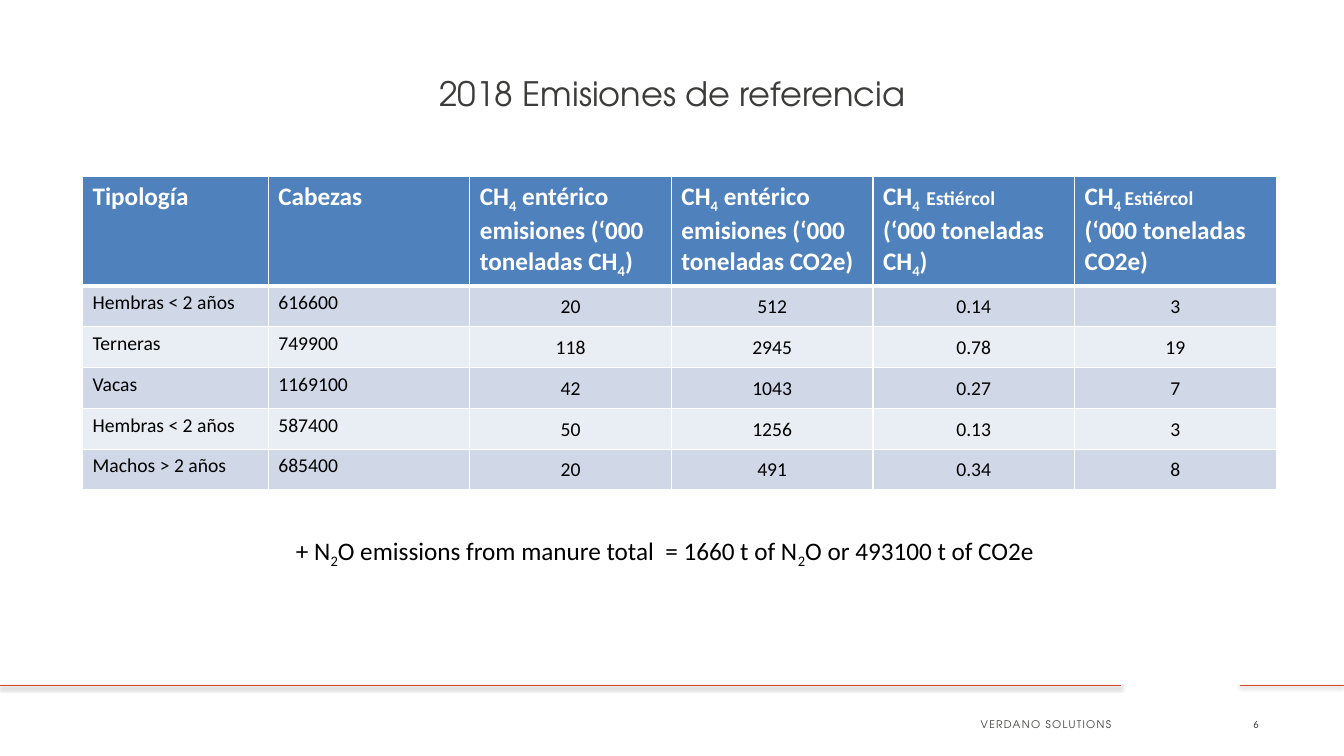
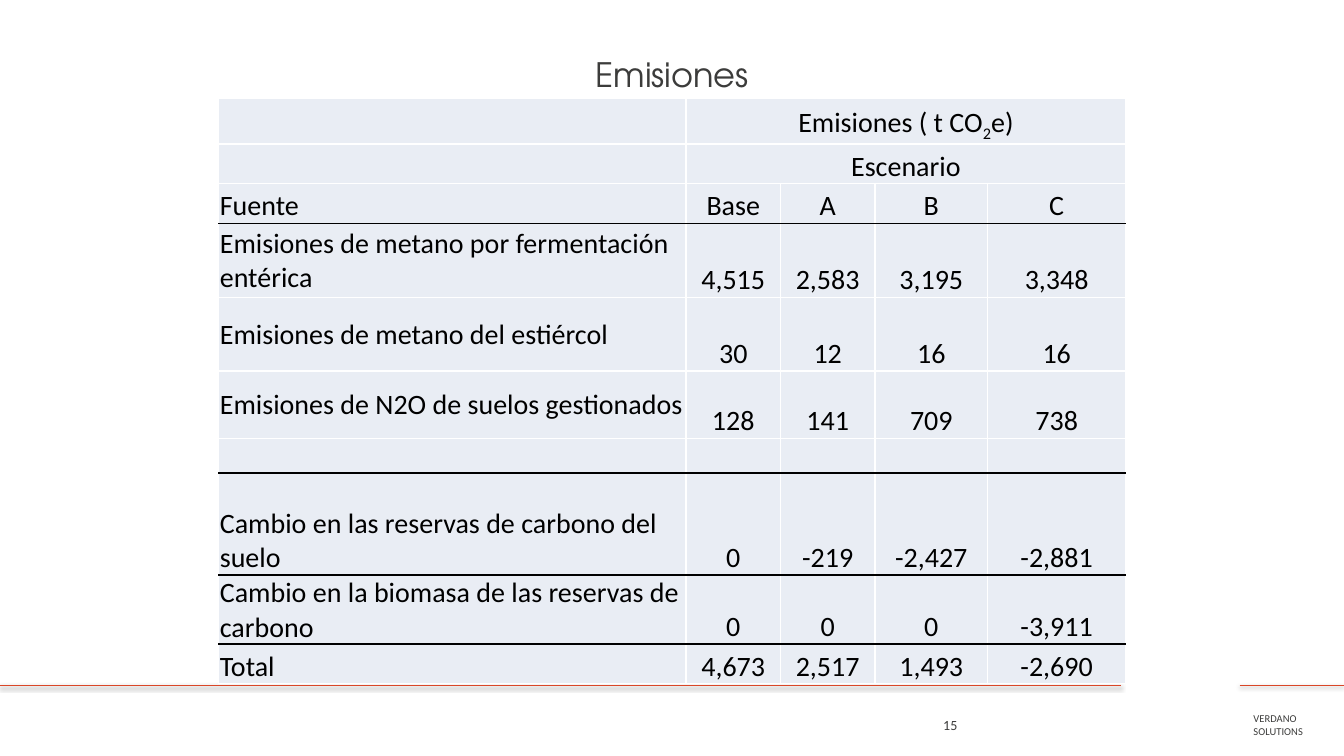
from lxml.etree import SubElement
from pptx import Presentation
from pptx.dml.color import RGBColor
from pptx.enum.shapes import MSO_CONNECTOR
from pptx.enum.text import MSO_ANCHOR, PP_ALIGN
from pptx.oxml import parse_xml
from pptx.oxml.ns import qn
from pptx.util import Cm, Pt

INK = {"red": "DA4627", "gray": "3C3C3B", "black": "000000", "white": "FFFFFF",
       "blue": "4F81BD", "mid": "D0D8E8", "pale": "E9EDF4"}
SANS, BODY = "TeX Gyre Adventor", "Calibri"
LEFT, RIGHT, CENTER = PP_ALIGN.LEFT, PP_ALIGN.RIGHT, PP_ALIGN.CENTER
TOP, MIDDLE, BOTTOM = MSO_ANCHOR.TOP, MSO_ANCHOR.MIDDLE, MSO_ANCHOR.BOTTOM
SMALL = 14
FIRM = "VERDANO SOLUTIONS"
CORNER = (31.34, 17.75, 2.08, 1.02)
SHADOW = ('<a:effectLst xmlns:a="http://schemas.openxmlformats.org/drawingml/2006/main">'
          '<a:outerShdw blurRad="39400" dist="20300" dir="5400000" rotWithShape="0">'
          '<a:srgbClr val="000000"><a:alpha val="38000"/></a:srgbClr>'
          '</a:outerShdw></a:effectLst>')


def write(para, text, size, color, font=BODY, bold=False, gap=0):
    """Add runs: |x| is a subscript, text after ~ is small."""
    large, _, small = text.partition("~")
    for part, points in ((large, size), (small, SMALL)):
        for i, piece in enumerate(part.split("|")):
            if not piece:
                continue
            run = para.add_run()
            run.text = piece
            run.font.name = font
            run.font.size = Pt(points)
            run.font.bold = bold
            run.font.color.rgb = RGBColor.from_string(INK[color])
            props = run._r.get_or_add_rPr()
            if i % 2:
                props.set("baseline", "-25000")
            if gap:
                props.set("spc", str(gap))


def border(cell, side, color, width):
    """Draw one side (L, R, T or B) of a cell."""
    line = SubElement(cell._tc.get_or_add_tcPr(), qn("a:ln" + side),
                      w=str(Pt(width)))
    fill = SubElement(line, qn("a:solidFill"))
    SubElement(fill, qn("a:srgbClr"), val=INK[color])


# Content: each text is (words, box, size, font, colour, align, gap, wrap);
# cells from column "tight" have thin margins, from column "mid" are centred
DECK = [
    {
        "texts": [
            ("2018 Emisiones de referencia", (1.7, 0.76, 30.48, 3.18),
             24, SANS, "gray", CENTER, 0, True),
            (FIRM, (17.53, 17.75, 10.72, 1.02), 7.5, SANS, "gray", RIGHT, 90, True),
            ("6", CORNER, 7.5, BODY, "gray", LEFT, 0, True),
            ("+ N|2|O emissions from manure total  = 1660 t of N|2|O or 493100 t of CO2e",
             (7.21, 13.36, 19.38, 1.02), 18, BODY, "black", LEFT, 0, False),
        ],
        "at": (2.08, 4.45),
        "cols": [4.68] + [5.08] * 5,
        "tall": [2.72] + [1.03] * 5,
        "size": 14, "head": 1, "fills": ["mid", "pale"],
        "tight": 2, "mid": 2, "anchor": MIDDLE, "raised": [],
        "rules": {0: ("white", 3)}, "spans": [],
        "rows": [
            ["Tipología", "Cabezas",
             "CH|4| entérico emisiones (‘000 toneladas CH|4|)",
             "CH|4| entérico emisiones (‘000 toneladas CO2e)",
             "CH|4  |~Estiércol\n(‘000 toneladas CH|4|)",
             "CH|4 |~Estiércol\n(‘000 toneladas CO2e)"],
            ["Hembras < 2 años", "616600", "20", "512", "0.14", "3"],
            ["Terneras", "749900", "118", "2945", "0.78", "19"],
            ["Vacas", "1169100", "42", "1043", "0.27", "7"],
            ["Hembras < 2 años", "587400", "50", "1256", "0.13", "3"],
            ["Machos > 2 años", "685400", "20", "491", "0.34", "8"],
        ],
    },
    {
        "texts": [
            ("Emisiones", (5.51, 0.28, 22.86, 3.18), 24, SANS, "gray", CENTER, 0, True),
            (FIRM, CORNER, 7.5, BODY, "gray", LEFT, 0, True),
            ("15", (23.52, 17.75, 1.55, 1.02), 10, BODY, "gray", LEFT, 0, True),
        ],
        "at": (5.51, 2.49),
        "cols": [11.78, 2.38, 2.38, 2.84, 3.48],
        "tall": [1.14, 1, 1, 1.86, 1.86, 1.7, 0.87, 2.57, 1.74, 1],
        "size": 20, "head": 0, "fills": ["pale"],
        "tight": 0, "mid": 1, "anchor": BOTTOM, "raised": [3, 4, 5],
        "rules": {r: ("black", 1) for r in (2, 6, 7, 8)}, "spans": [0, 1],
        "rows": [
            ["", "Emisiones ( t CO|2|e)", "", "", ""],
            ["", "Escenario", "", "", ""],
            ["Fuente", "Base", "A", "B", "C"],
            ["Emisiones de metano por fermentación entérica",
             "4,515", "2,583", "3,195", "3,348"],
            ["Emisiones de metano del estiércol", "30", "12", "16", "16"],
            ["Emisiones de N2O de suelos gestionados", "128", "141", "709", "738"],
            [""] * 5,
            ["Cambio en las reservas de carbono del suelo",
             "0", "-219", "-2,427", "-2,881"],
            ["Cambio en la biomasa de las reservas de carbono",
             "0", "0", "0", "-3,911"],
            ["Total", "4,673", "2,517", "1,493", "-2,690"],
        ],
    },
]

prs = Presentation()
prs.slide_width, prs.slide_height = Cm(33.87), Cm(19.05)

for page in DECK:
    slide = prs.slides.add_slide(prs.slide_layouts[6])

    # Red foot lines
    for start, end in ((0, 28.24), (31.24, 33.87)):
        line = slide.shapes.add_connector(
            MSO_CONNECTOR.STRAIGHT, Cm(start), Cm(17.27), Cm(end), Cm(17.27))
        line.line.color.rgb = RGBColor.from_string(INK["red"])
        line.line.width = Pt(0.75)
        line._element.spPr.append(parse_xml(SHADOW))

    # Title, footer and notes on the page
    for words, box, size, font, color, align, gap, wrap in page["texts"]:
        frame = slide.shapes.add_textbox(*[Cm(n) for n in box]).text_frame
        frame.word_wrap = wrap
        frame.vertical_anchor = MIDDLE if wrap else TOP
        para = frame.paragraphs[0]
        para.alignment = align
        write(para, words, size, color, font, gap=gap)

    # Table grid
    rows, cols, tall = page["rows"], page["cols"], page["tall"]
    left, top = page["at"]
    table = slide.shapes.add_table(
        len(rows), len(cols), Cm(left), Cm(top),
        Cm(sum(cols)), Cm(sum(tall))).table
    table.first_row = table.horz_banding = False
    for c, width in enumerate(cols):
        table.columns[c].width = Cm(width)
    for r, height in enumerate(tall):
        table.rows[r].height = Cm(height)

    # Table cells
    plain = ("white", 1)
    for r, row in enumerate(rows):
        head = r < page["head"]
        for c, words in enumerate(row):
            cell = table.cell(r, c)
            border(cell, "L", *plain)
            border(cell, "R", *plain)
            border(cell, "T", *page["rules"].get(r - 1, plain))
            border(cell, "B", *page["rules"].get(r, plain))
            cell.fill.solid()
            shade = "blue" if head else page["fills"][(r - 1) % len(page["fills"])]
            cell.fill.fore_color.rgb = RGBColor.from_string(INK[shade])
            if not head and c >= page["tight"]:
                cell.margin_left = cell.margin_right = cell.margin_top = Cm(0.03)
                cell.margin_bottom = 0
                lifted = c == 0 and r in page["raised"]
                cell.vertical_anchor = MIDDLE if lifted else page["anchor"]
            for i, part in enumerate(words.split("\n")):
                frame = cell.text_frame
                para = frame.add_paragraph() if i else frame.paragraphs[0]
                para.alignment = CENTER if c >= page["mid"] and not head else LEFT
                write(para, part, 18 if head else page["size"],
                      "white" if head else "black", bold=head)

    # Headings across the value columns
    for r in page["spans"]:
        table.cell(r, 1).merge(table.cell(r, len(cols) - 1))

prs.save("out.pptx")
